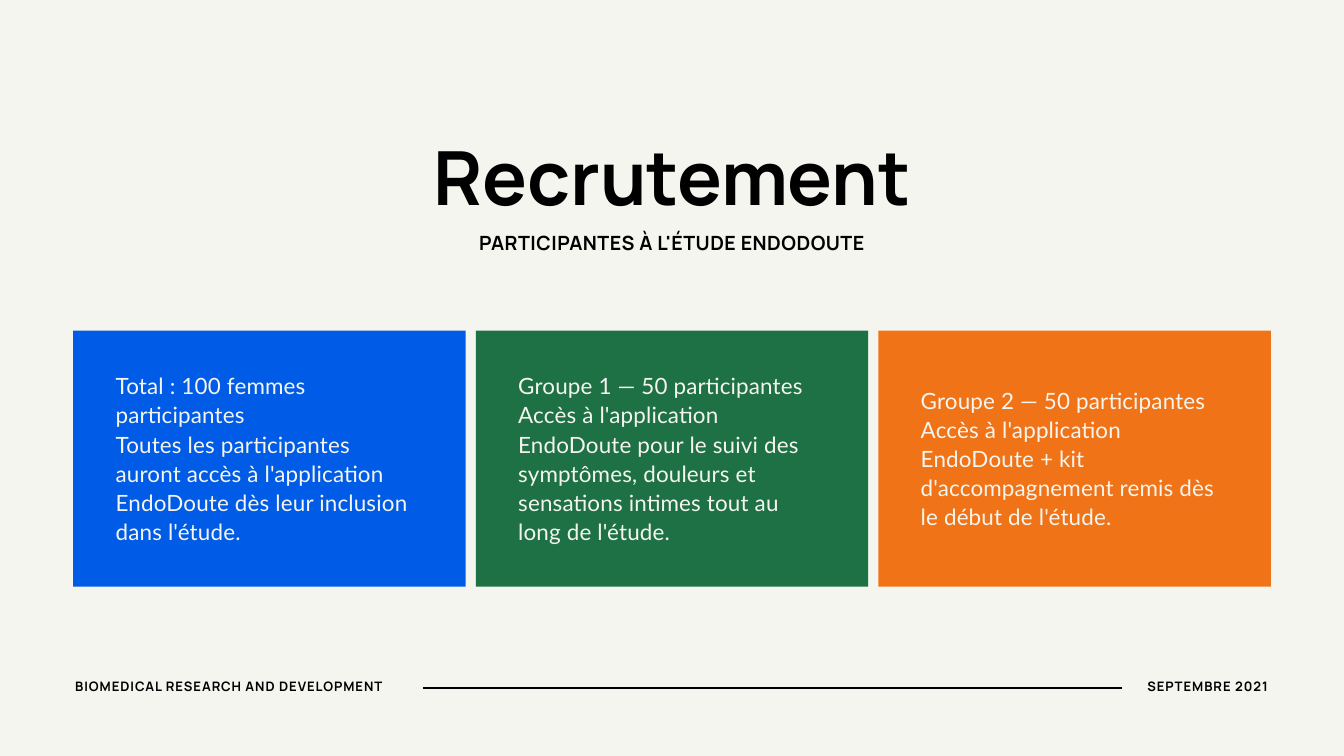
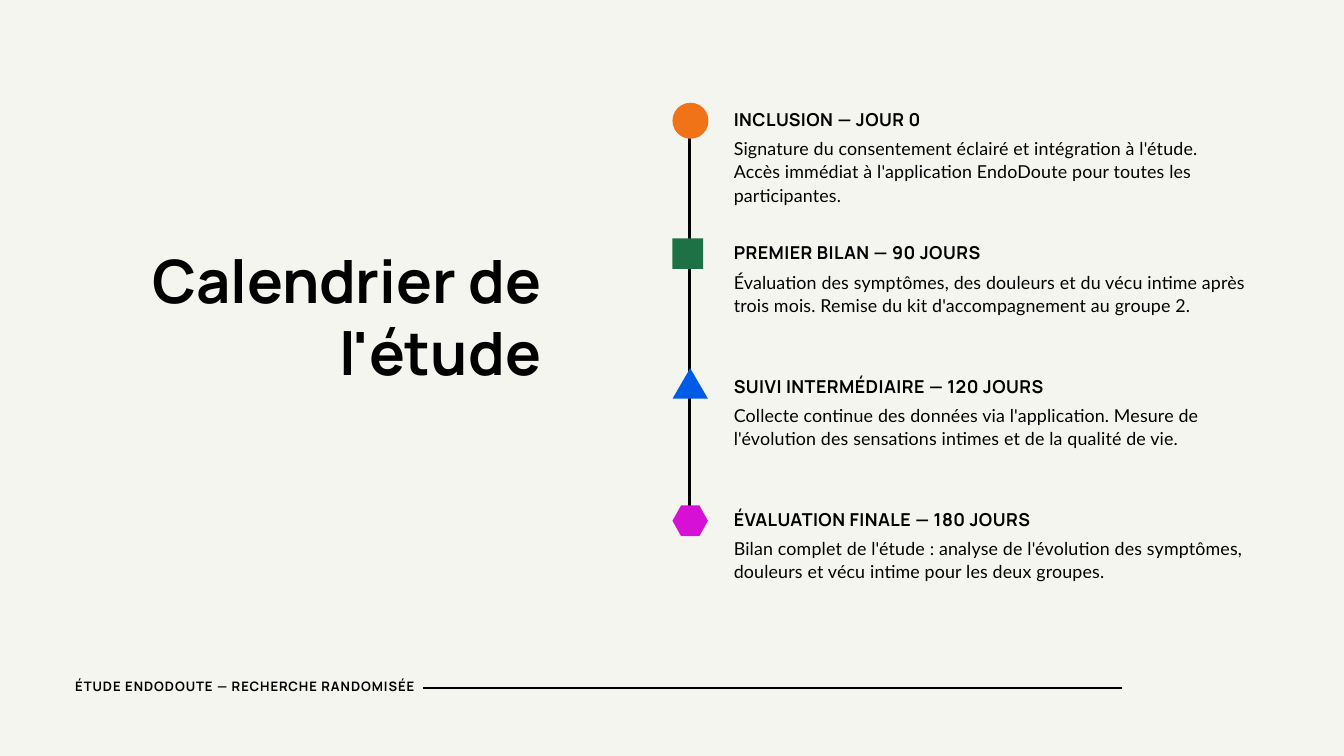
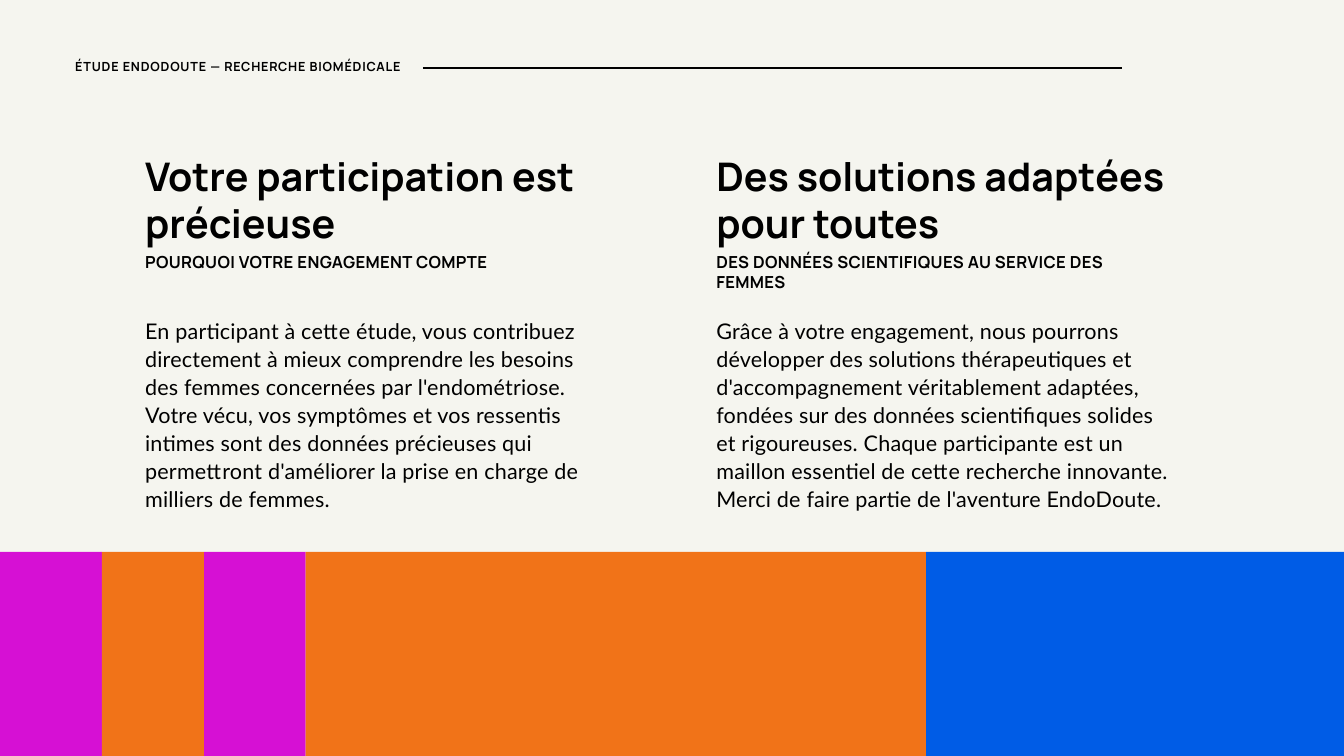
from itertools import pairwise

from lxml import etree
from pptx import Presentation
from pptx.dml.color import RGBColor
from pptx.enum.shapes import MSO_CONNECTOR, MSO_SHAPE
from pptx.enum.text import MSO_ANCHOR, MSO_AUTO_SIZE, PP_ALIGN
from pptx.oxml.ns import qn
from pptx.util import Pt

LEFT, CENTER, RIGHT = PP_ALIGN.LEFT, PP_ALIGN.CENTER, PP_ALIGN.RIGHT
TOP, MIDDLE = MSO_ANCHOR.TOP, MSO_ANCHOR.MIDDLE
NO_FIT = MSO_AUTO_SIZE.NONE
STRAIGHT = MSO_CONNECTOR.STRAIGHT
RECT, OVAL = MSO_SHAPE.RECTANGLE, MSO_SHAPE.OVAL
TRIANGLE, HEXAGON = MSO_SHAPE.ISOSCELES_TRIANGLE, MSO_SHAPE.HEXAGON

WIDTH, HEIGHT = 1440, 810
TITLE_ONLY, COMPARISON = 5, 4
PAPER, INK = "F5F5EF", "000000"
BLUE, GREEN, ORANGE, PINK = "005CE6", "1D7144", "F17318", "D610D4"

HEAD, BODY = "Manrope", "Lato"
LEADING = {HEAD: 1.2, BODY: 1.3}
STYLES = {
    "title": (HEAD, 80, 0),
    "side_title": (HEAD, 64, 0),
    "column_title": (HEAD, 42.2, 0),
    "subtitle": (HEAD, 21, 0.5),
    "step": (HEAD, 19.1, 0.5),
    "column_subtitle": (HEAD, 17.8, 0.4),
    "footer": (HEAD, 14, 1),
    "header": (HEAD, 13.5, 0.9),
    "card": (BODY, 24, 0.2),
    "step_text": (BODY, 19.1, 0.2),
    "column_text": (BODY, 23.1, 0.2),
}

CARDS = [
    (BLUE, ["Total : 100 femmes participantes",
            "Toutes les participantes auront accès à l'application EndoDoute "
            "dès leur inclusion dans l'étude."]),
    (GREEN, ["Groupe 1 — 50 participantes",
             "Accès à l'application EndoDoute pour le suivi des symptômes, "
             "douleurs et sensations intimes tout au long de l'étude."]),
    (ORANGE, ["Groupe 2 — 50 participantes",
              "Accès à l'application EndoDoute + kit d'accompagnement remis "
              "dès le début de l'étude."]),
]

STEPS = [
    (OVAL, ORANGE, 38.6, 38.6, 129.4, "INCLUSION — JOUR 0",
     "Signature du consentement éclairé et intégration à l'étude. Accès "
     "immédiat à l'application EndoDoute pour toutes les participantes."),
    (RECT, GREEN, 32.8, 32.8, 271.8, "PREMIER BILAN — 90 JOURS",
     "Évaluation des symptômes, des douleurs et du vécu intime après trois "
     "mois. Remise du kit d'accompagnement au groupe 2."),
    (TRIANGLE, BLUE, 38, 32.8, 410.8, "SUIVI INTERMÉDIAIRE — 120 JOURS",
     "Collecte continue des données via l'application. Mesure de l'évolution "
     "des sensations intimes et de la qualité de vie."),
    (HEXAGON, PINK, 38, 32.8, 558, "ÉVALUATION FINALE — 180 JOURS",
     "Bilan complet de l'étude : analyse de l'évolution des symptômes, "
     "douleurs et vécu intime pour les deux groupes."),
]

COLUMNS = [
    ("Votre participation est précieuse", "POURQUOI VOTRE ENGAGEMENT COMPTE",
     "En participant à cette étude, vous contribuez directement à mieux "
     "comprendre les besoins des femmes concernées par l'endométriose. Votre "
     "vécu, vos symptômes et vos ressentis intimes sont des données "
     "précieuses qui permettront d'améliorer la prise en charge de milliers "
     "de femmes."),
    ("Des solutions adaptées pour toutes",
     "DES DONNÉES SCIENTIFIQUES AU SERVICE DES FEMMES",
     "Grâce à votre engagement, nous pourrons développer des solutions "
     "thérapeutiques et d'accompagnement véritablement adaptées, fondées sur "
     "des données scientifiques solides et rigoureuses. Chaque participante "
     "est un maillon essentiel de cette recherche innovante. Merci de faire "
     "partie de l'aventure EndoDoute."),
]


def rgb(color):
    return RGBColor.from_string(color)


def set_all(target, values):
    for name, value in values.items():
        setattr(target, name, value)


class Deck:
    def __init__(self):
        self.prs = Presentation()
        set_all(self.prs, {"slide_width": Pt(WIDTH), "slide_height": Pt(HEIGHT)})
        fill = self.prs.slide_master.background.fill
        fill.solid()
        fill.fore_color.rgb = rgb(PAPER)
        self.s = None

    def slide(self, layout):
        self.s = self.prs.slides.add_slide(self.prs.slide_layouts[layout])

    def text(self, box, style, lines, color=INK, align=LEFT, anchor=TOP):
        sp = self.s.shapes.add_textbox(*map(Pt, box))
        self.fill_text(sp, style, lines, color, align, anchor)

    def placeholder(self, idx, box, style, lines, align=LEFT):
        sp = self.s.placeholders[idx]
        set_all(sp, dict(zip(("left", "top", "width", "height"), map(Pt, box))))
        self.fill_text(sp, style, lines, INK, align, TOP)

    def fill_text(self, sp, style, lines, color, align, anchor):
        font, size, spacing = STYLES[style]
        tf = sp.text_frame
        set_all(tf, {"word_wrap": True, "auto_size": NO_FIT,
                     "vertical_anchor": anchor,
                     "margin_left": 0, "margin_right": 0,
                     "margin_top": 0, "margin_bottom": 0})
        for i, line in enumerate(lines):
            p = tf.add_paragraph() if i else tf.paragraphs[0]
            set_all(p, {"alignment": align, "space_before": Pt(0),
                        "line_spacing": Pt(round(size * LEADING[font], 1))})
            if sp.is_placeholder:
                pPr = p._p.get_or_add_pPr()
                pPr.set("marL", "0")
                pPr.set("indent", "0")
                etree.SubElement(pPr, qn("a:buNone"))
            r = p.add_run()
            r.text = line
            set_all(r.font, {"name": font, "size": Pt(size), "bold": font == HEAD})
            r.font.color.rgb = rgb(color)
            if spacing:
                r._r.get_or_add_rPr().set("spc", str(round(spacing * 100)))

    def shape(self, kind, box, color):
        sp = self.s.shapes.add_shape(kind, *map(Pt, box))
        sp.shadow.inherit = False
        sp.fill.solid()
        sp.fill.fore_color.rgb = rgb(color)
        sp.line.fill.background()
        return sp

    def line(self, x1, y1, x2, y2, weight):
        c = self.s.shapes.add_connector(STRAIGHT, *map(Pt, (x1, y1, x2, y2)))
        c.line.color.rgb = rgb(INK)
        c.line.width = Pt(weight)
        etree.SubElement(c._element.spPr, qn("a:effectLst"))

    def caption(self, label, style="footer", top=727.2, rule=737.6):
        self.line(453, rule, 1202, rule, 2.2)
        self.text((80.6, top, 372, 18), style, [label])


def recruitment(deck):
    deck.slide(TITLE_ONLY)
    deck.placeholder(0, (377.3, 139.7, 685.4, 99.4), "title", ["Recrutement"], CENTER)
    deck.text((377.3, 247.7, 685.4, 26), "subtitle",
              ["PARTICIPANTES À L'ÉTUDE ENDODOUTE"], align=CENTER)
    for i, (color, lines) in enumerate(CARDS):
        left = 78.5 + i * 431.3
        deck.shape(RECT, (left, 354.3, 420.5, 274.3), color)
        deck.text((left + 45.4, 396.7, 327, 187), "card", lines, PAPER, anchor=MIDDLE)
    deck.caption("BIOMEDICAL RESEARCH AND DEVELOPMENT")
    deck.text((1210.3, 727.2, 148.3, 18), "footer", ["SEPTEMBRE 2021"], align=RIGHT)


def calendar(deck):
    deck.slide(TITLE_ONLY)
    deck.placeholder(0, (134.6, 261.4, 445, 155.5), "side_title",
                     ["Calendrier de l'étude"], RIGHT)
    deck.line(739, 110, 739, 558, 3.6)
    for i, (kind, color, width, height, middle, heading, text) in enumerate(STEPS):
        marker = deck.shape(kind, (720.5, middle - height / 2, width, height), color)
        if kind == HEXAGON:
            marker.adjustments[0] = 0.28
        top = 116.6 + i * 142.8
        deck.text((786.2, top, 550, 24), "step", [heading])
        deck.text((786.2, top + 29.4, 550, 48.2), "step_text", [text])
    deck.caption("ÉTUDE ENDODOUTE — RECHERCHE RANDOMISÉE")


def engagement(deck):
    deck.slide(COMPARISON)
    for i, (heading, subtitle, text) in enumerate(COLUMNS):
        left, width = 155.5 + i * 612, 489.6
        box = (left, 162.7, width, 100.8)
        if i:
            deck.text(box, "column_title", [heading])
        else:
            deck.placeholder(0, box, "column_title", [heading])
        deck.placeholder(2 * i + 1, (left, 270, width, 22.3), "column_subtitle", [subtitle])
        deck.placeholder(2 * i + 2, (left, 338.4, width, 207.4), "column_text", [text])
    edges = pairwise([0, 109.3, 218.6, 327.6, 992.2, WIDTH])
    for (left, right), color in zip(edges, [PINK, ORANGE, PINK, ORANGE, BLUE]):
        deck.shape(RECT, (left, 591.2, right - left, HEIGHT - 591.2), color)
    deck.caption("ÉTUDE ENDODOUTE — RECHERCHE BIOMÉDICALE", "header", 62.6, 72.4)


def main():
    deck = Deck()
    for build in (recruitment, calendar, engagement):
        build(deck)
    deck.prs.save("out.pptx")


if __name__ == "__main__":
    main()
